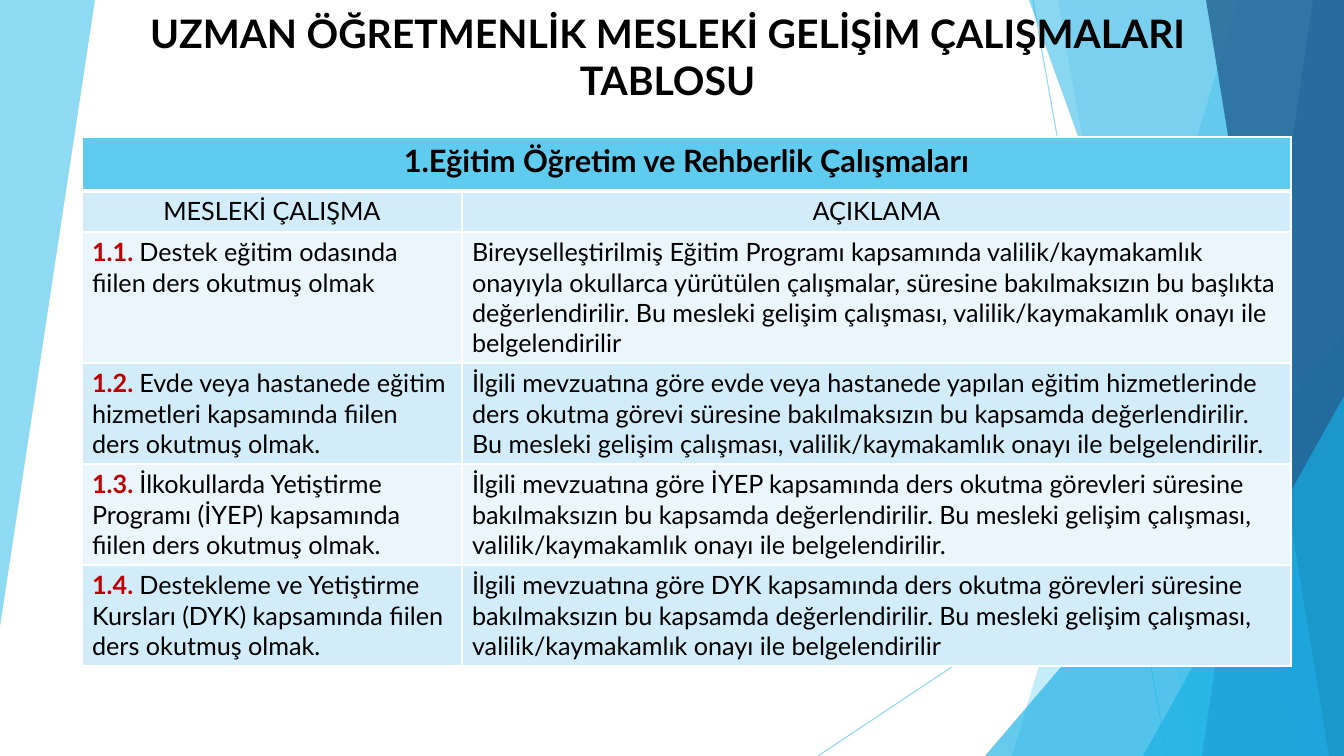
"""Builds the slide with the table of professional development activities."""
import lxml.etree
import pptx
import pptx.dml.color
import pptx.enum.shapes
import pptx.enum.text
import pptx.oxml.ns
import pptx.util

RGB = pptx.dml.color.RGBColor
ALIGN = pptx.enum.text.PP_ALIGN
SHAPE = pptx.enum.shapes.MSO_SHAPE
qn = pptx.oxml.ns.qn

SKY = RGB(0x5F, 0xCB, 0xEF)
CYAN = RGB(0x17, 0xB0, 0xE4)
BLUE = RGB(0x2E, 0x83, 0xC3)
NAVY = RGB(0x22, 0x62, 0x92)
BAND_DARK = RGB(0xD2, 0xEC, 0xF9)
BAND_LIGHT = RGB(0xEA, 0xF6, 0xFC)
RED = RGB(0xC0, 0x00, 0x00)
BLACK = RGB(0, 0, 0)
WHITE = RGB(0xFF, 0xFF, 0xFF)

FONT = "Lato"
PX = 914400 / 100.8
W, H = 1344, 756

TITLE = "UZMAN ÖĞRETMENLİK MESLEKİ GELİŞİM ÇALIŞMALARI TABLOSU"
TITLE_BOX = (58, 4, 1219, 104)
HEADING = "1.Eğitim Öğretim ve Rehberlik Çalışmaları"
COLUMNS = ("MESLEKİ ÇALIŞMA", "AÇIKLAMA")
ACTIVITIES = [
    ("1.1.", "Destek eğitim odasında fiilen ders okutmuş olmak",
     "Bireyselleştirilmiş Eğitim Programı kapsamında valilik/kaymakamlık onayıyla okullarca "
     "yürütülen çalışmalar, süresine bakılmaksızın bu başlıkta değerlendirilir. Bu mesleki "
     "gelişim çalışması, valilik/kaymakamlık onayı ile belgelendirilir"),
    ("1.2.", "Evde veya hastanede eğitim hizmetleri kapsamında fiilen ders okutmuş olmak.",
     "İlgili mevzuatına göre evde veya hastanede yapılan eğitim hizmetlerinde ders okutma "
     "görevi süresine bakılmaksızın bu kapsamda değerlendirilir. Bu mesleki gelişim "
     "çalışması, valilik/kaymakamlık onayı ile belgelendirilir."),
    ("1.3.", "İlkokullarda Yetiştirme Programı (İYEP) kapsamında fiilen ders okutmuş olmak.",
     "İlgili mevzuatına göre İYEP kapsamında ders okutma görevleri süresine bakılmaksızın bu "
     "kapsamda değerlendirilir. Bu mesleki gelişim çalışması, valilik/kaymakamlık onayı ile "
     "belgelendirilir."),
    ("1.4.", "Destekleme ve Yetiştirme Kursları (DYK) kapsamında fiilen ders okutmuş olmak.",
     "İlgili mevzuatına göre DYK kapsamında ders okutma görevleri süresine bakılmaksızın bu "
     "kapsamda değerlendirilir. Bu mesleki gelişim çalışması, valilik/kaymakamlık onayı ile "
     "belgelendirilir"),
]
TABLE_LEFT, TABLE_TOP = 82, 137
COL_WIDTHS = (380, 829)
ROW_HEIGHTS = (54, 41, 131, 101, 101, 101)

DECOR = [
    ("outline", [(0, 0), (95, 0), (0, 627)], SKY, 70),
    ("line", [(1033, 0), (1167, H)], SKY, 70),
    ("line", [(W, 406), (818, H)], SKY, 70),
    ("outline", [(1238, 0), (W, 0), (W, H), (1012, H)], SKY, 36),
    ("outline", [(1058, 0), (W, 0), (W, H), (1192, H)], SKY, 20),
    ("triangle", [(985, 336), (W, H)], CYAN, 66),
    ("outline", [(1029, 0), (W, 0), (W, H), (1301, H)], CYAN, 50),
    ("outline", [(1313, 0), (W, 0), (W, H), (1202, H)], BLUE, 70),
    ("outline", [(1206, 0), (W, 0), (W, H), (1329, H)], NAVY, 80),
    ("triangle", [(1143, 396), (W, H)], CYAN, 66),
]


def px(n):
    return pptx.util.Emu(round(n * PX))


def set_alpha(element, percent):
    color = next(element.iter(qn("a:srgbClr")))
    lxml.etree.SubElement(color, qn("a:alpha"), val=str(percent * 1000))


def add_decor(shapes, kind, points, color, alpha):
    (x1, y1), (x2, y2) = points[0], points[-1]
    if kind == "line":
        sp = shapes.add_connector(pptx.enum.shapes.MSO_CONNECTOR.STRAIGHT,
                                  px(x1), px(y1), px(x2), px(y2))
        sp.line.color.rgb = color
        sp.line.width = pptx.util.Pt(0.75)
        properties = sp.line._get_or_add_ln().getparent()
        set_alpha(properties, alpha)
        lxml.etree.SubElement(properties, qn("a:effectLst"))
        return
    if kind == "triangle":
        sp = shapes.add_shape(SHAPE.ISOSCELES_TRIANGLE, px(x1), px(y1), px(x2 - x1), px(y2 - y1))
        sp.adjustments[0] = 1
    else:
        builder = shapes.build_freeform(x1, y1, scale=PX)
        builder.add_line_segments(points[1:], close=True)
        sp = builder.convert_to_shape()
    sp.shadow.inherit = False
    sp.fill.solid()
    sp.fill.fore_color.rgb = color
    set_alpha(sp.element.spPr, alpha)
    sp.line.fill.background()


def add_run(p, text, size, bold=False, color=BLACK):
    r = p.add_run()
    r.text = text
    r.font.name = FONT
    r.font.size = pptx.util.Pt(size)
    r.font.bold = bold
    r.font.color.rgb = color


def style_cell(cell, color, top=1, bottom=1):
    properties = cell._tc.get_or_add_tcPr()
    for side, width in (("L", 1), ("R", 1), ("T", top), ("B", bottom)):
        ln = lxml.etree.SubElement(properties, qn("a:ln" + side), w=str(width * 12700))
        solid = lxml.etree.SubElement(ln, qn("a:solidFill"))
        lxml.etree.SubElement(solid, qn("a:srgbClr"), val=str(WHITE))
    cell.fill.solid()
    cell.fill.fore_color.rgb = color


def add_activity_table(shapes):
    frame = shapes.add_table(len(ROW_HEIGHTS), len(COL_WIDTHS), px(TABLE_LEFT), px(TABLE_TOP),
                             px(sum(COL_WIDTHS)), px(sum(ROW_HEIGHTS)))
    table = frame.table
    table.first_row = table.horz_banding = False
    for column, width in zip(table.columns, COL_WIDTHS):
        column.width = px(width)
    for row, height in zip(table.rows, ROW_HEIGHTS):
        row.height = px(height)

    for cell in table.rows[0].cells:
        style_cell(cell, SKY, bottom=3)
    heading = table.cell(0, 0)
    heading.merge(table.cell(0, 1))
    p = heading.text_frame.paragraphs[0]
    p.alignment = ALIGN.CENTER
    add_run(p, HEADING, 22, bold=True)

    for cell, label in zip(table.rows[1].cells, COLUMNS):
        style_cell(cell, BAND_DARK, top=3)
        p = cell.text_frame.paragraphs[0]
        p.alignment = ALIGN.CENTER
        add_run(p, label, 18)

    for i, (number, activity, description) in enumerate(ACTIVITIES, start=2):
        left, right = table.rows[i].cells
        for cell in (left, right):
            style_cell(cell, BAND_DARK if i % 2 else BAND_LIGHT)
        p = left.text_frame.paragraphs[0]
        add_run(p, number + " ", 18, bold=True, color=RED)
        add_run(p, activity, 18)
        add_run(right.text_frame.paragraphs[0], description, 18)


def main():
    prs = pptx.Presentation()
    prs.slide_width, prs.slide_height = px(W), px(H)
    shapes = prs.slides.add_slide(prs.slide_layouts[6]).shapes

    for part in DECOR:
        add_decor(shapes, *part)

    tf = shapes.add_textbox(*map(px, TITLE_BOX)).text_frame
    tf.word_wrap = True
    p = tf.paragraphs[0]
    p.alignment = ALIGN.CENTER
    add_run(p, TITLE, 28, bold=True)

    add_activity_table(shapes)
    prs.save("out.pptx")


if __name__ == "__main__":
    main()
